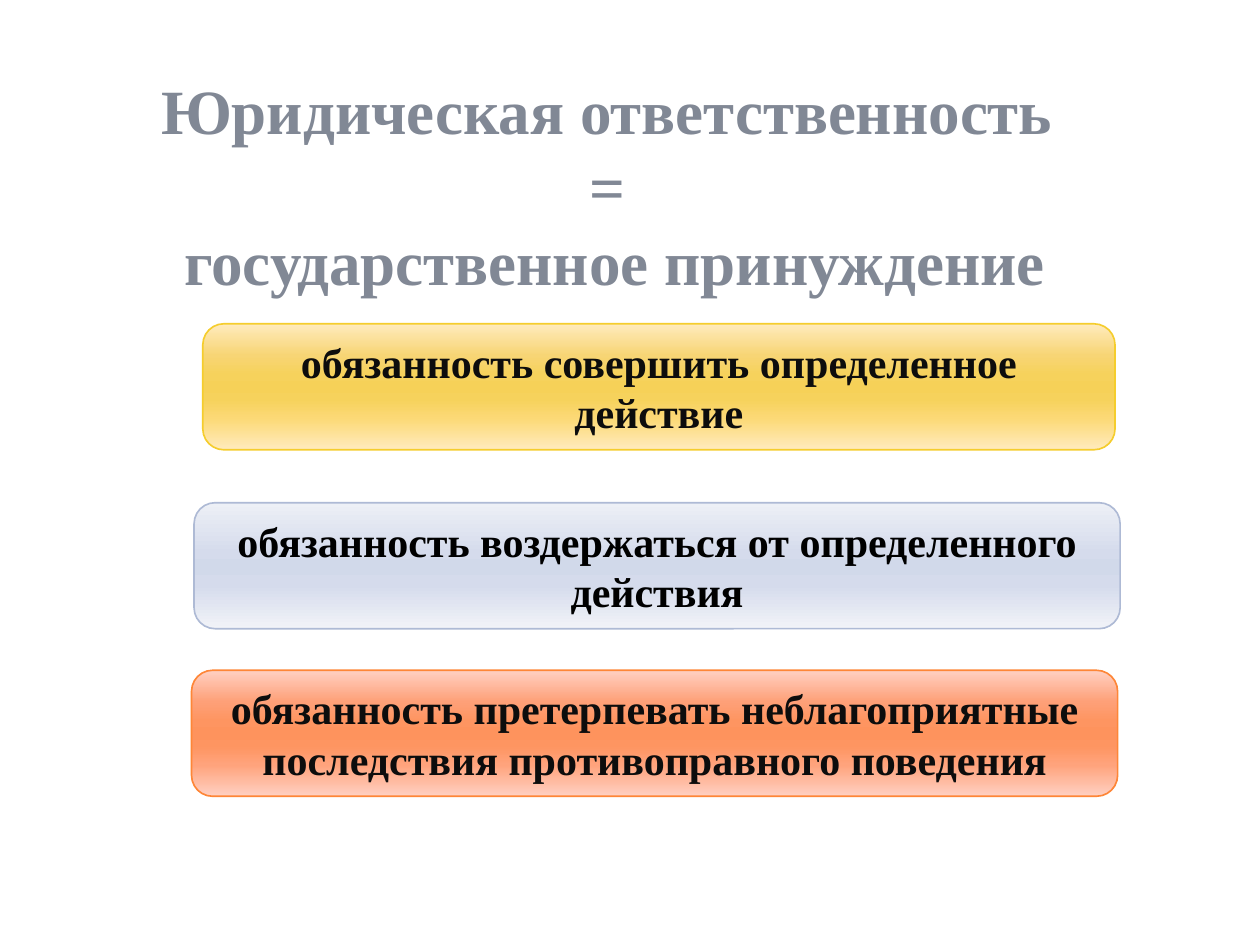
from lxml.etree import SubElement
from pptx import Presentation
from pptx.dml.color import RGBColor
from pptx.enum.shapes import MSO_SHAPE
from pptx.enum.text import MSO_ANCHOR, PP_ALIGN
from pptx.oxml.ns import qn
from pptx.util import Inches, Pt

COLORS = {
    "ink": "0D0D0D",
    "black": "000000",
    "yellow_line": "F5CD2D",
    "blue_line": "AEBAD5",
    "orange_line": "FE8637",
}
GRADIENTS = {
    "title": {0: "383D45", 78: "818895", 100: "F3F4F5"},
    "yellow": {0: "FFEBBD", 25: "F7D575", 40: "F6D25C", 50: "F6D158",
               60: "F6D25C", 75: "FCD976", 100: "FFEBBD"},
    "blue": {0: "EDF0F6", 40: "D5DBEC", 50: "D1D9EA", 65: "D5DBEC", 100: "F1F3F8"},
    "orange": {0: "FFD0C2", 25: "FEA078", 40: "FE9561", 50: "FE935D",
               60: "FE9561", 75: "FFA37C", 100: "FFD0C2"},
}
FONT = {"name": "Times New Roman", "bold": True}
FRAME = {"word_wrap": True, "vertical_anchor": MSO_ANCHOR.MIDDLE}
TITLE = "Юридическая ответственность \v= \vгосударственное принуждение"
DUTIES = [
    (1.61, 2.57, 7.24, "yellow", "ink", "обязанность совершить определенное действие"),
    (1.54, 3.99, 7.35, "blue", "black", "обязанность воздержаться от определенного действия"),
    (1.52, 5.32, 7.35, "orange", "ink",
     "обязанность претерпевать неблагоприятные последствия противоправного поведения"),
]


def set_all(target, values):
    for attribute, value in values.items():
        setattr(target, attribute, value)


def apply_gradient(fill, properties, stops):
    fill.gradient()
    fill.gradient_angle = 270
    stop_list = properties.find(qn("a:gradFill")).find(qn("a:gsLst"))
    for default_stop in list(stop_list):
        stop_list.remove(default_stop)
    for percent, color in stops.items():
        stop = SubElement(stop_list, qn("a:gs"), pos=str(percent * 1000))
        SubElement(stop, qn("a:srgbClr"), val=color)


def write_text(frame, text, size):
    paragraph = frame.paragraphs[0]
    paragraph.text = text
    paragraph.alignment = PP_ALIGN.CENTER
    for run in paragraph.runs:
        set_all(run.font, {**FONT, "size": Pt(size)})
    return paragraph.runs


def add_heading(slide):
    heading = slide.shapes.add_textbox(Inches(0.35), Inches(0.52), Inches(9.06), Inches(1.02))
    set_all(heading.text_frame, {**FRAME, "vertical_anchor": MSO_ANCHOR.TOP})
    for run in write_text(heading.text_frame, TITLE, 36):
        apply_gradient(run.font.fill, run._r.get_or_add_rPr(), GRADIENTS["title"])


def add_duty(slide, left, top, width, tone, text_color, text):
    duty = slide.shapes.add_shape(MSO_SHAPE.ROUNDED_RECTANGLE, Inches(left), Inches(top),
                                  Inches(width), Inches(1))
    duty.shadow.inherit = False
    apply_gradient(duty.fill, duty._element.spPr, GRADIENTS[tone])
    duty.line.color.rgb = RGBColor.from_string(COLORS[f"{tone}_line"])
    duty.line.width = Pt(0.94)
    set_all(duty.text_frame, FRAME)
    for run in write_text(duty.text_frame, text, 24):
        run.font.color.rgb = RGBColor.from_string(COLORS[text_color])


def main():
    presentation = Presentation()
    set_all(presentation, {"slide_width": Inches(10), "slide_height": Inches(7.5)})
    slide = presentation.slides.add_slide(presentation.slide_layouts[6])
    add_heading(slide)
    for duty in DUTIES:
        add_duty(slide, *duty)
    presentation.save("out.pptx")


if __name__ == "__main__":
    main()
